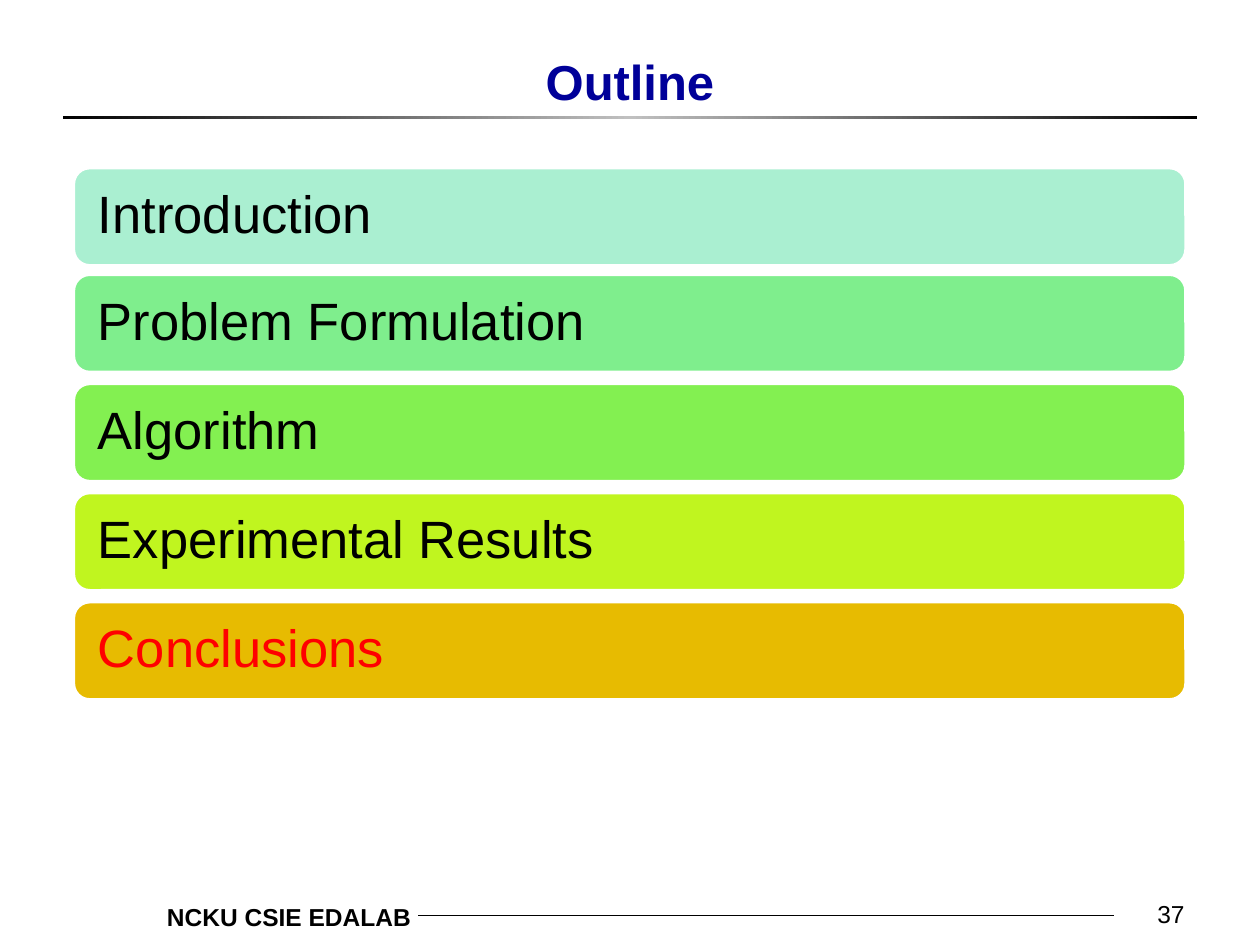
"""Build the outline slide with its five topic bars."""
from copy import deepcopy
from dataclasses import dataclass

from lxml import etree
from pptx import Presentation
from pptx.dml.color import RGBColor
from pptx.enum.shapes import MSO_CONNECTOR, MSO_SHAPE
from pptx.enum.text import MSO_ANCHOR, PP_ALIGN
from pptx.oxml.ns import qn
from pptx.util import Cm, Pt

RECT = MSO_SHAPE.RECTANGLE
ROUND = MSO_SHAPE.ROUNDED_RECTANGLE
LINE = MSO_CONNECTOR.STRAIGHT
LEFT, MID, RIGHT = PP_ALIGN.LEFT, PP_ALIGN.CENTER, PP_ALIGN.RIGHT
TOP, CENTER, BOTTOM = MSO_ANCHOR.TOP, MSO_ANCHOR.MIDDLE, MSO_ANCHOR.BOTTOM
FONT = "Arial"


@dataclass(frozen=True)
class Topic:
    """One bar of the outline."""
    text: str
    top: float
    fill: str
    ink: str = "000000"


@dataclass(frozen=True)
class Label:
    """One free text box, with its box in centimetres."""
    text: str
    box: tuple[float, float, float, float]
    size: int
    align: PP_ALIGN
    anchor: MSO_ANCHOR
    ink: str = "000000"
    bold: bool = False


TOPICS = [
    Topic("Introduction", 3.38, "AAEFD1"),
    Topic("Problem Formulation", 5.53, "7FEE8D"),
    Topic("Algorithm", 7.73, "83F051"),
    Topic("Experimental Results", 9.93, "C0F51F"),
    Topic("Conclusions", 12.13, "E7BB01", "FF0000"),
]
LABELS = [
    Label("NCKU CSIE EDALAB", (2.39, 18.06, 6.15, 0.86), 14, RIGHT, TOP, bold=True),
    Label("Outline", (1.9, 0, 21.6, 2.34), 28, MID, BOTTOM, "000099", True),
    Label("37", (18.85, 17.58, 5.28, 1.27), 14, RIGHT, BOTTOM),
]


def color(code: str) -> RGBColor:
    """Turn a hex string into a colour."""
    return RGBColor.from_string(code)


def write(shape, text: str, size: int, ink: str, align: PP_ALIGN,
          anchor: MSO_ANCHOR, bold: bool = False) -> None:
    """Set and format the one line of text in a shape."""
    frame = shape.text_frame
    frame.text = text
    frame.word_wrap = True
    frame.vertical_anchor = anchor
    para = frame.paragraphs[0]
    para.alignment = align
    font = para.runs[0].font
    font.name, font.size, font.bold = FONT, Pt(size), bold
    font.color.rgb = color(ink)


def add_label(slide, label: Label) -> None:
    """Add a text box."""
    shape = slide.shapes.add_textbox(*map(Cm, label.box))
    write(shape, label.text, label.size, label.ink, label.align,
          label.anchor, label.bold)


def add_topic(slide, topic: Topic) -> None:
    """Add a rounded topic bar."""
    bar = slide.shapes.add_shape(ROUND, Cm(1.48), Cm(topic.top), Cm(22.43), Cm(1.98))
    bar.shadow.inherit = False
    bar.fill.solid()
    bar.fill.fore_color.rgb = color(topic.fill)
    bar.line.color.rgb = color("FFFFFF")
    bar.line.width = Pt(2)
    write(bar, topic.text, 30, topic.ink, LEFT, CENTER)
    frame = bar.text_frame
    frame.margin_left = frame.margin_right = Cm(0.4)
    frame.margin_top = frame.margin_bottom = Cm(0.4)
    frame.paragraphs[0].line_spacing = 0.9


def add_rule(slide) -> None:
    """Add the title rule, dark at both ends and grey in the middle."""
    rule = slide.shapes.add_shape(RECT, Cm(1.27), Cm(2.33), Cm(22.86), Cm(0.08))
    rule.shadow.inherit = False
    rule.line.fill.background()
    fill = rule.fill
    fill.gradient()
    fill.gradient_angle = 0
    stops = rule._element.spPr.find(qn("a:gradFill")).find(qn("a:gsLst"))
    stops.append(deepcopy(stops[0]))
    ends = [(0, "000000"), (0.5, "C0C0C0"), (1, "000000")]
    for stop, (place, code) in zip(fill.gradient_stops, ends):
        stop.position = place
        stop.color.rgb = color(code)


def add_line(slide) -> None:
    """Add the thin footer line."""
    line = slide.shapes.add_connector(LINE, Cm(8.43), Cm(18.46), Cm(22.45), Cm(18.46))
    line.line.color.rgb = color("000000")
    line.line.width = Pt(0.5)
    etree.SubElement(line._element.spPr, qn("a:effectLst"))


def main() -> None:
    """Build and save the slide."""
    deck = Presentation()
    deck.slide_width, deck.slide_height = Cm(25.4), Cm(19.05)
    slide = deck.slides.add_slide(deck.slide_layouts[6])
    add_rule(slide)
    add_line(slide)
    for label in LABELS:
        add_label(slide, label)
    for topic in TOPICS:
        add_topic(slide, topic)
    deck.save("out.pptx")


if __name__ == "__main__":
    main()
